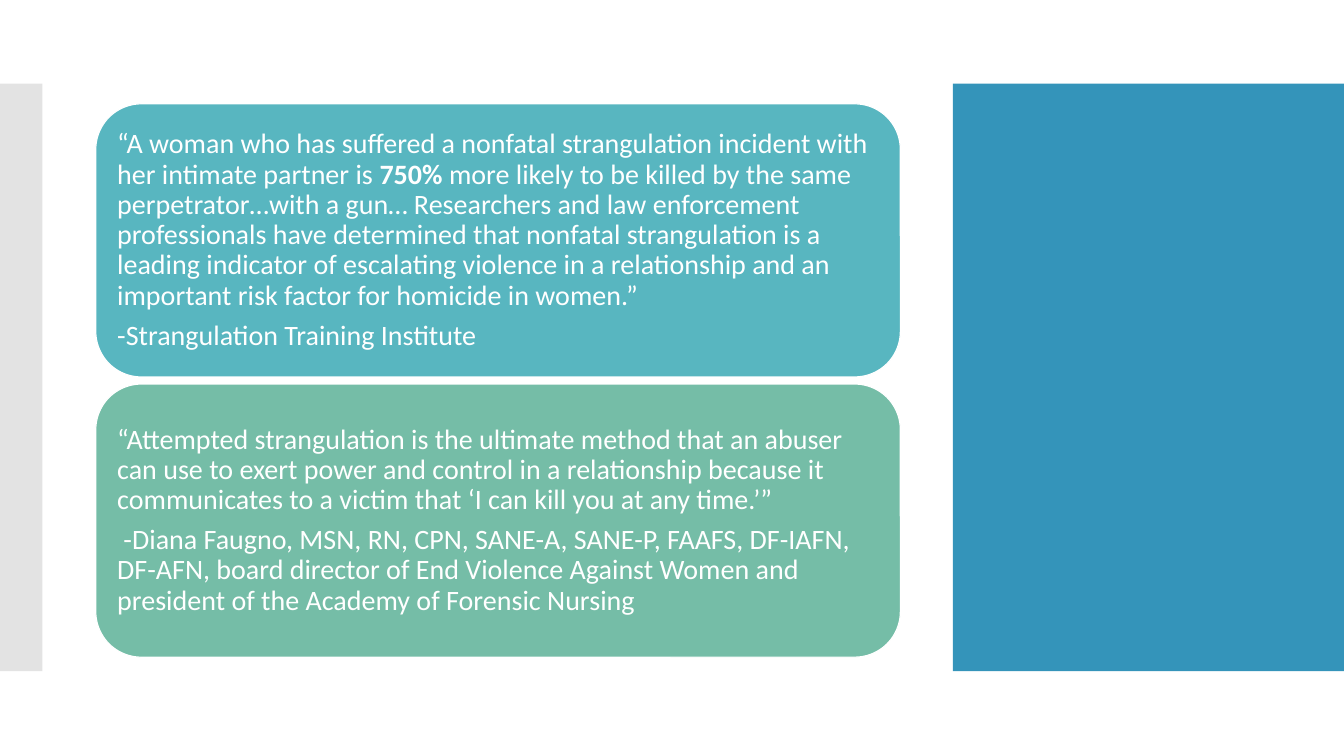
"""Build a slide with two stacked quotation cards between side panels."""
from dataclasses import dataclass

from lxml import etree
from pptx import Presentation
from pptx.dml.color import RGBColor
from pptx.enum.shapes import MSO_SHAPE
from pptx.enum.text import MSO_ANCHOR, PP_ALIGN
from pptx.oxml.ns import qn
from pptx.util import Inches, Pt

RECTANGLE = MSO_SHAPE.RECTANGLE
ROUNDED = MSO_SHAPE.ROUNDED_RECTANGLE
MIDDLE = MSO_ANCHOR.MIDDLE
LEFT = PP_ALIGN.LEFT


@dataclass(frozen=True)
class Theme:
    """Colours, font and sizes of the slide."""
    white: str = "FFFFFF"
    blue: str = "3494BA"
    grey: str = "C8C8C8"
    teal: str = "58B6C0"
    green: str = "75BDA7"
    font: str = "Calibri"
    body: float = 20
    outline: float = 0.85


THEME = Theme()
QUOTES = [
    (THEME.teal, [
        [("“A woman who has suffered a nonfatal strangulation incident with "
          "her intimate partner is ", False),
         ("750% ", True),
         ("more likely to be killed by the same perpetrator…with a gun… "
          "Researchers and law enforcement professionals have determined "
          "that nonfatal strangulation is a leading indicator of "
          "escalating violence in a relationship and an important risk "
          "factor for homicide in women.”", False)],
        [("-Strangulation Training Institute", False)],
    ]),
    (THEME.green, [
        [("“Attempted strangulation is the ultimate method that an abuser "
          "can use to exert power and control in a relationship because it "
          "communicates to a victim that ‘I can kill you at any time.’”",
          False)],
        [(" -Diana Faugno, MSN, RN, CPN, SANE-A, SANE-P, FAAFS, DF-IAFN, "
          "DF-AFN, board director of End Violence Against Women and "
          "president of the Academy of Forensic Nursing", False)],
    ]),
]


def set_format(target, values):
    """Set each named attribute on the target."""
    for name, value in values.items():
        setattr(target, name, value)


def add_block(page, kind, box, color):
    """Add a filled shape without line or shadow."""
    shape = page.shapes.add_shape(kind, *map(Inches, box))
    shape.shadow.inherit = False
    shape.fill.solid()
    shape.fill.fore_color.rgb = RGBColor.from_string(color)
    shape.line.fill.background()
    return shape


def add_side_panels(page, box):
    """Place the grey strip and the blue panel at the ends of the box."""
    left, top, width, height = box
    strip = add_block(page, RECTANGLE, (left, top, 0.42, height), THEME.grey)
    color = strip.fill._xPr.find(qn("a:solidFill"))[0]
    etree.SubElement(color, qn("a:alpha"), val="50000")
    panel_width = 3.88
    panel_box = (left + width - panel_width, top, panel_width, height)
    add_block(page, RECTANGLE, panel_box, THEME.blue)


def add_quote_card(page, box, color, paragraphs):
    """Place one rounded card with its quotation and source."""
    card = add_block(page, ROUNDED, box, color)
    card.line.color.rgb = RGBColor.from_string(THEME.white)
    card.line.width = Pt(THEME.outline)
    frame = card.text_frame
    inset = Inches(0.08)
    set_format(frame, {
        "word_wrap": True, "vertical_anchor": MIDDLE,
        "margin_left": inset, "margin_right": inset,
        "margin_top": inset, "margin_bottom": inset,
    })
    for index, spans in enumerate(paragraphs):
        para = frame.add_paragraph() if index else frame.paragraphs[0]
        set_format(para, {"alignment": LEFT, "line_spacing": 0.9,
                          "space_after": Pt(0.35 * THEME.body)})
        for text, bold in spans:
            span = para.add_run()
            span.text = text
            set_format(span.font, {"name": THEME.font, "bold": bold,
                                   "size": Pt(THEME.body)})
            span.font.color.rgb = RGBColor.from_string(THEME.white)


def add_quotes(page, box, gap=0.07):
    """Stack the quotation cards evenly inside the box."""
    left, top, width, height = box
    card_height = (height - gap * (len(QUOTES) - 1)) / len(QUOTES)
    for index, (color, paragraphs) in enumerate(QUOTES):
        card_top = top + index * (card_height + gap)
        add_quote_card(page, (left, card_top, width, card_height),
                       color, paragraphs)


def main():
    """Build and save the deck."""
    deck = Presentation()
    set_format(deck, {"slide_width": Inches(13.33),
                      "slide_height": Inches(7.5)})
    page = deck.slides.add_slide(deck.slide_layouts[6])
    add_side_panels(page, (0, 0.83, 13.33, 5.83))
    add_quotes(page, (0.95, 1.03, 7.98, 5.49))
    deck.save("out.pptx")


if __name__ == "__main__":
    main()
